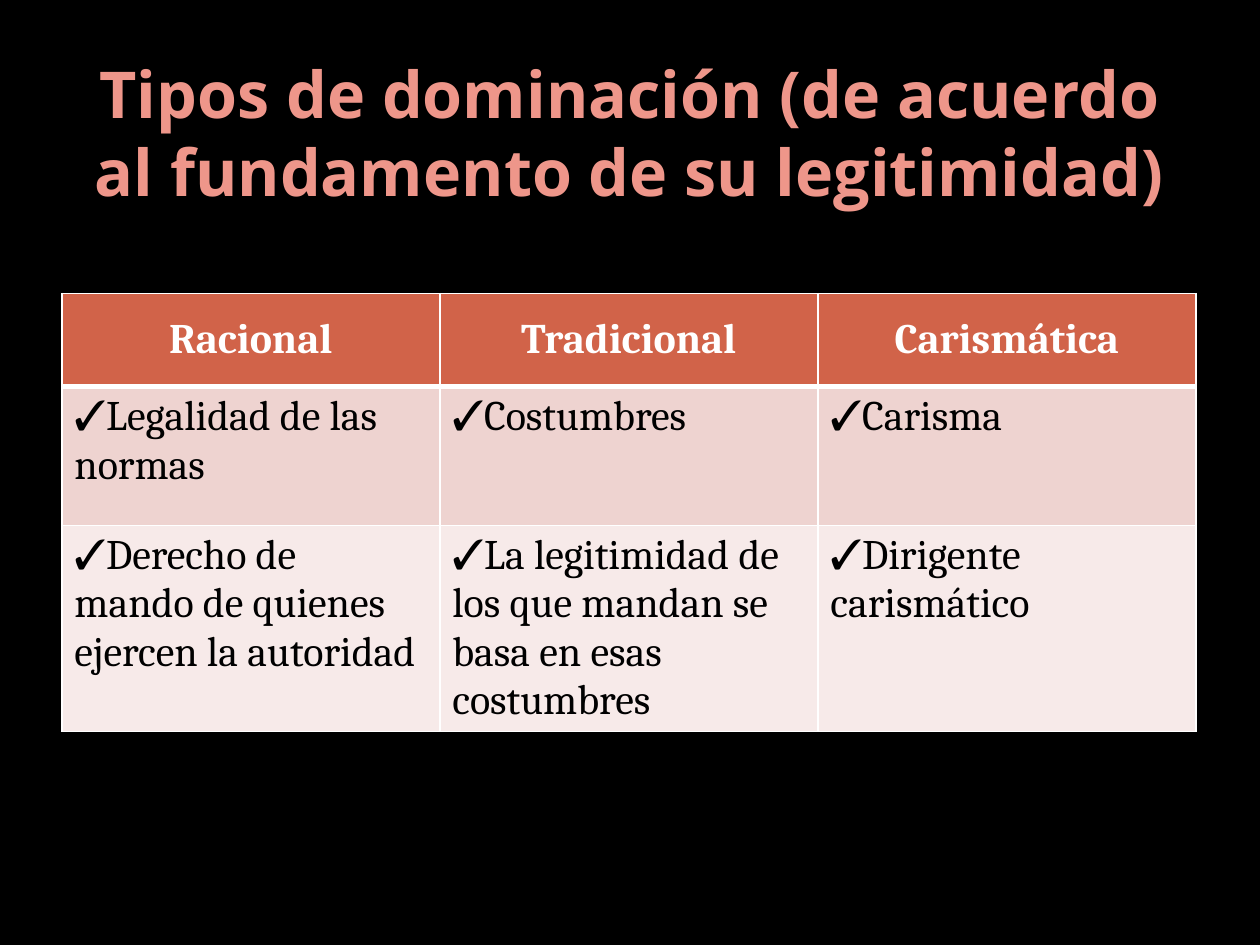
from lxml import etree
from pptx import Presentation
from pptx.dml.color import RGBColor
from pptx.enum import text
from pptx.oxml import ns
from pptx.util import Inches, Pt

BLACK = RGBColor(0x00, 0x00, 0x00)
WHITE = RGBColor(0xFF, 0xFF, 0xFF)
SALMON = RGBColor(0xEE, 0x96, 0x8A)
HEADER = RGBColor(0xD1, 0x63, 0x49)
BANDS = [RGBColor(0xEE, 0xD3, 0xD0), RGBColor(0xF7, 0xEA, 0xE9)]

TITLE = "Tipos de dominación (de acuerdo al fundamento de su legitimidad)"
ROWS = [
    ["Racional", "Tradicional", "Carismática"],
    ["Legalidad de las normas", "Costumbres", "Carisma"],
    [
        "Derecho de mando de quienes ejercen la autoridad",
        "La legitimidad de los que mandan se basa en esas costumbres",
        "Dirigente carismático",
    ],
]
ROW_HEIGHTS = [0.74, 1.1, 1.61]
COLUMN_WIDTH = 3


def write_text(frame, content, *, font, size, color, bold=False,
               align=text.PP_ALIGN.LEFT, bullet=None):
    paragraph = frame.paragraphs[0]
    paragraph.alignment = align
    run = paragraph.add_run()
    run.text = content
    run.font.name = font
    run.font.size = Pt(size)
    run.font.bold = bold
    run.font.color.rgb = color
    if bullet:
        properties = paragraph._p.get_or_add_pPr()
        properties.set("marL", "0")
        properties.set("indent", "0")
        etree.SubElement(properties, ns.qn("a:buFont"), typeface=font)
        etree.SubElement(properties, ns.qn("a:buChar"), char=bullet)


def set_border(cell, side, width):
    properties = cell._tc.get_or_add_tcPr()
    line = etree.SubElement(properties, ns.qn(f"a:ln{side}"), w=str(Pt(width)))
    fill = etree.SubElement(line, ns.qn("a:solidFill"))
    etree.SubElement(fill, ns.qn("a:srgbClr"), val=str(WHITE))


def format_cell(cell, content, row):
    is_header = row == 0
    for side in "LRTB":
        thick = (is_header and side == "B") or (row == 1 and side == "T")
        set_border(cell, side, 3 if thick else 1)
    cell.fill.solid()
    if is_header:
        cell.fill.fore_color.rgb = HEADER
        cell.vertical_anchor = text.MSO_ANCHOR.MIDDLE
        write_text(cell.text_frame, content, font="Cambria", size=24,
                   color=WHITE, bold=True, align=text.PP_ALIGN.CENTER)
    else:
        cell.fill.fore_color.rgb = BANDS[row - 1]
        cell.margin_right = Inches(0.13)
        write_text(cell.text_frame, content, font="Cambria", size=24,
                   color=BLACK, bullet="✓")


def add_title(slide):
    title = slide.shapes.title
    title.left, title.top = Inches(0.5), Inches(0.72)
    title.width, title.height = Inches(9), Inches(1.25)
    frame = title.text_frame
    frame.word_wrap = True
    frame.auto_size = text.MSO_AUTO_SIZE.NONE
    frame.vertical_anchor = text.MSO_ANCHOR.BOTTOM
    frame.margin_bottom = Inches(0.31)
    write_text(frame, TITLE, font="Open Sans", size=36.9, color=SALMON,
               bold=True, align=text.PP_ALIGN.CENTER)


def add_domination_table(slide):
    column_count = len(ROWS[0])
    table = slide.shapes.add_table(
        len(ROWS), column_count, Inches(0.49), Inches(2.33),
        Inches(COLUMN_WIDTH * column_count), Inches(sum(ROW_HEIGHTS))).table
    for column in table.columns:
        column.width = Inches(COLUMN_WIDTH)
    for row, (height, contents) in enumerate(zip(ROW_HEIGHTS, ROWS)):
        table.rows[row].height = Inches(height)
        for column, content in enumerate(contents):
            format_cell(table.cell(row, column), content, row)


def main():
    presentation = Presentation()
    presentation.slide_width = Inches(10)
    presentation.slide_height = Inches(7.5)
    slide = presentation.slides.add_slide(presentation.slide_layouts[5])
    slide.background.fill.solid()
    slide.background.fill.fore_color.rgb = BLACK
    add_title(slide)
    add_domination_table(slide)
    presentation.save("out.pptx")


if __name__ == "__main__":
    main()
